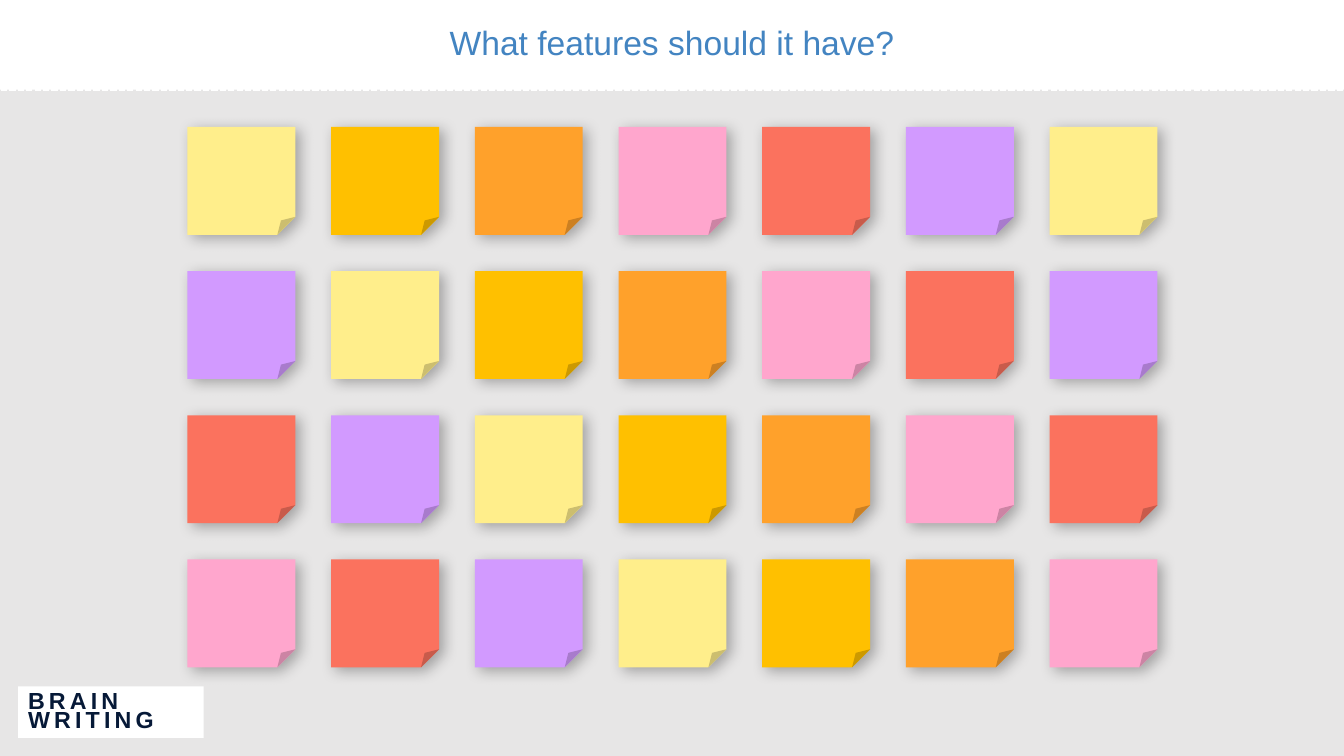
from lxml.etree import SubElement
from pptx import Presentation
from pptx.dml.color import RGBColor
from pptx.enum.dml import MSO_LINE
from pptx.enum.shapes import MSO_SHAPE
from pptx.enum.text import MSO_ANCHOR, PP_ALIGN
from pptx.oxml.ns import qn
from pptx.util import Inches, Pt

COLORS = {
    "background": "E7E6E6", "white": "FFFFFF", "title": "4384C1", "label": "061937",
    "yellow": "FFEE8B", "gold": "FFC000", "orange": "FFA12B",
    "pink": "FFA6CD", "red": "FB725E", "purple": "D29AFF", "shadow": "000000",
}
NOTE_COLORS = ["yellow", "gold", "orange", "pink", "red", "purple"]
ROWS, COLUMNS = 4, 7
NOTE_SIZE = 1.07
NOTE_LEFT, NOTE_TOP = 1.86, 1.26
STEP_X, STEP_Y = 1.425, 1.43


def set_fill(fill, color):
    fill.solid()
    fill.fore_color.rgb = RGBColor.from_string(COLORS[color])


def add_soft_shadow(shape):
    shape.shadow.inherit = False
    effects = shape._element.spPr.find(qn("a:effectLst"))
    shadow = SubElement(effects, qn("a:outerShdw"), blurRad=str(Pt(10.5)),
                        dist=str(Pt(4)), dir=str(37 * 60000),
                        algn="tl", rotWithShape="0")
    color = SubElement(shadow, qn("a:srgbClr"), val=COLORS["shadow"])
    SubElement(color, qn("a:alpha"), val="29000")


presentation = Presentation()
presentation.slide_width = Inches(13.33)
presentation.slide_height = Inches(7.5)
slide = presentation.slides.add_slide(presentation.slide_layouts[5])
set_fill(slide.background.fill, "background")

# Title band and label
title = slide.shapes.title
title.left, title.top = Inches(0), Inches(0)
title.width, title.height = Inches(13.33), Inches(0.89)
title.line.width = Pt(1.5)
title.line.dash_style = MSO_LINE.SQUARE_DOT
set_fill(title.line.fill, "white")
label = slide.shapes.add_textbox(Inches(0.18), Inches(6.81), Inches(1.84), Inches(0.51))

texts = [
    (title, "What features should it have?", "title", MSO_ANCHOR.MIDDLE,
     {"alignment": PP_ALIGN.CENTER, "line_spacing": 0.9},
     {"size": Pt(24), "bold": False}),
    (label, "BRAIN WRITING", "label", MSO_ANCHOR.BOTTOM,
     {"alignment": PP_ALIGN.LEFT, "line_spacing": 0.7},
     {"size": Pt(16.6), "bold": True}),
]
for shape, text, color, anchor, paragraph_format, font_format in texts:
    set_fill(shape.fill, "white")
    frame = shape.text_frame
    frame.word_wrap = True
    frame.vertical_anchor = anchor
    paragraph = frame.paragraphs[0]
    for name, value in paragraph_format.items():
        setattr(paragraph, name, value)
    run = paragraph.add_run()
    run.text = text
    run.font.name = "Arial"
    run.font.color.rgb = RGBColor.from_string(COLORS[color])
    for name, value in font_format.items():
        setattr(run.font, name, value)
label.text_frame.paragraphs[0].runs[0].font._element.set("spc", "300")

# Sticky notes: the colour sequence moves one column right on each row
for row in range(ROWS):
    for column in range(COLUMNS):
        note = slide.shapes.add_shape(
            MSO_SHAPE.FOLDED_CORNER,
            Inches(NOTE_LEFT + column * STEP_X), Inches(NOTE_TOP + row * STEP_Y),
            Inches(NOTE_SIZE), Inches(NOTE_SIZE))
        set_fill(note.fill, NOTE_COLORS[(column - row) % len(NOTE_COLORS)])
        note.line.fill.background()
        add_soft_shadow(note)

presentation.save("out.pptx")
